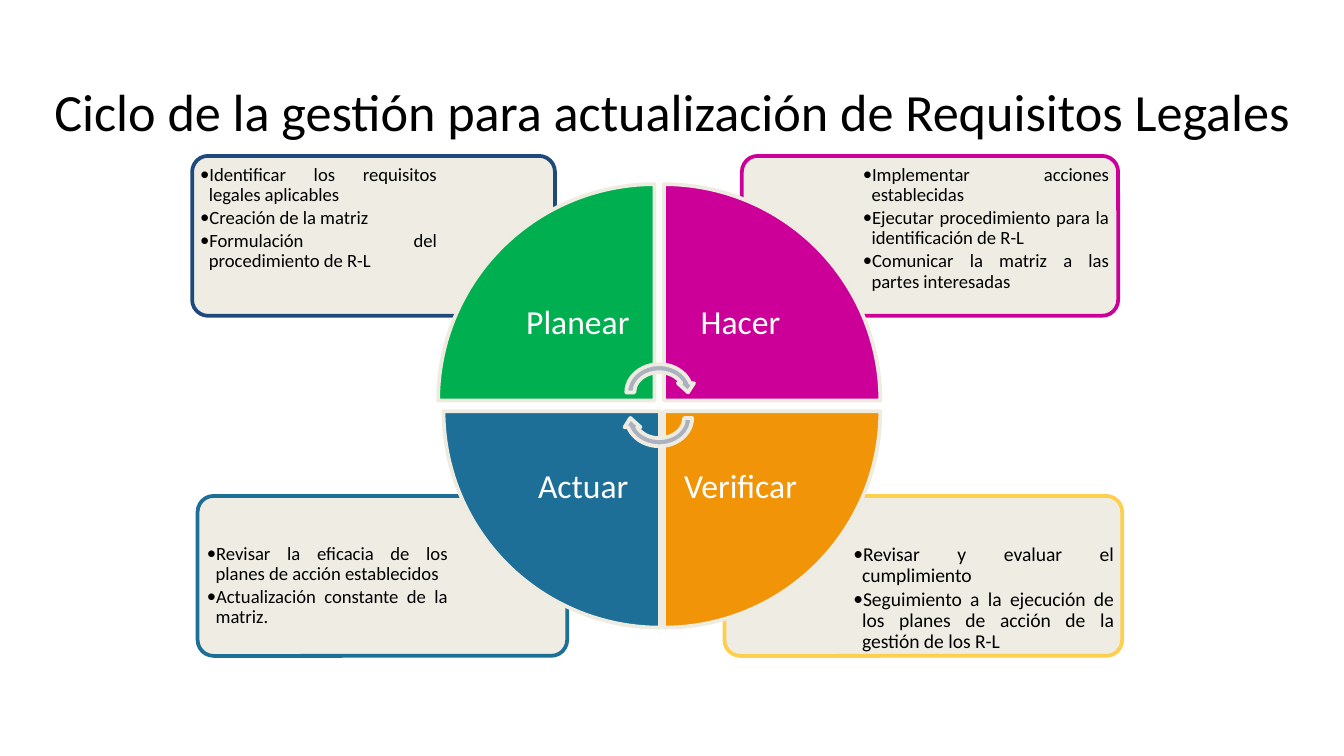
from dataclasses import dataclass

from lxml import etree
from pptx import Presentation
from pptx.dml.color import RGBColor
from pptx.enum.shapes import MSO_SHAPE
from pptx.enum.text import MSO_ANCHOR, PP_ALIGN
from pptx.oxml.ns import qn
from pptx.util import Emu, Pt

ROUNDED = MSO_SHAPE.ROUNDED_RECTANGLE
WEDGE = MSO_SHAPE.PIE_WEDGE
CIRCULAR_ARROW = MSO_SHAPE.CIRCULAR_ARROW
TOP, MIDDLE = MSO_ANCHOR.TOP, MSO_ANCHOR.MIDDLE
CENTER, JUSTIFY = PP_ALIGN.CENTER, PP_ALIGN.JUSTIFY
PX = 4572  # 200 px to the inch


@dataclass(frozen=True)
class Theme:
    font: str = "Calibri"
    ink: str = "000000"
    white: str = "FFFFFF"
    cream: str = "EEECE1"
    arrow: str = "ACB1BF"
    title_size: float = 28
    label_size: float = 18
    line_width: float = 2
    card_opacity: int = 90


THEME = Theme()
TITLE = "Ciclo de la gestión para actualización de Requisitos Legales"

# Card box, text box relative to the card, border, type size, bullets
CARDS = [
    ((1078, 738, 592, 238), (184, 64, 404, 168), "FECE4D", 10.5,
     ["Revisar y evaluar el cumplimiento",
      "Seguimiento a la ejecución de los planes de acción de la gestión de los R-L"]),
    ((294, 738, 550, 238), (6, 64, 374, 168), "1D6F98", 10,
     ["Revisar la eficacia de los planes de acción establecidos",
      "Actualización constante de la matriz."]),
    ((1104, 232, 560, 238), (172, 6, 382, 168), "CC0099", 10,
     ["Implementar acciones establecidas",
      "Ejecutar procedimiento para la identificación de R-L",
      "Comunicar la matriz a las partes interesadas"]),
    ((286, 232, 540, 238), (4, 6, 368, 168), "1F497D", 10,
     ["Identificar los requisitos legales aplicables",
      "Creación de la matriz",
      "Formulación del procedimiento de R-L"]),
]

# Label, left and top inside the wheel, rotation, colour
QUADRANTS = [
    ("Planear", 0, 0, 0, "00B050"),
    ("Hacer", 336, 0, 90, "CC0099"),
    ("Verificar", 336, 338, 180, "F19408"),
    ("Actuar", 8, 338, 270, "1D6F98"),
]


def scaled(box):
    return [Emu(length * PX) for length in box]


def apply(target, values):
    for name, value in values.items():
        setattr(target, name, value)


def add_filled_shape(slide, kind, box, fill, line, rotation=0):
    shape = slide.shapes.add_shape(kind, *scaled(box))
    shape.shadow.inherit = False
    shape.rotation = rotation
    shape.fill.solid()
    shape.fill.fore_color.rgb = RGBColor.from_string(fill)
    shape.line.color.rgb = RGBColor.from_string(line)
    shape.line.width = Pt(THEME.line_width)
    return shape


def add_text(slide, box, lines, size, color, alignment, anchor, inset,
             bullets=False, **paragraph_format):
    frame = slide.shapes.add_textbox(*scaled(box)).text_frame
    margins = ("margin_left", "margin_right", "margin_top", "margin_bottom")
    apply(frame, {"word_wrap": True, "vertical_anchor": anchor,
                  **dict.fromkeys(margins, Emu(inset * PX))})
    for index, line in enumerate(lines):
        paragraph = frame.add_paragraph() if index else frame.paragraphs[0]
        if bullets:
            add_bullet(paragraph)
        apply(paragraph, {"alignment": alignment, **paragraph_format})
        run = paragraph.add_run()
        run.text = line
        apply(run.font, {"name": THEME.font, "size": Pt(size)})
        run.font.color.rgb = RGBColor.from_string(color)


def add_bullet(paragraph, indent=13):
    properties = paragraph._p.get_or_add_pPr()
    properties.set("marL", str(indent * PX))
    properties.set("indent", str(-indent * PX))
    etree.SubElement(properties, qn("a:buFont")).set("typeface", THEME.font)
    etree.SubElement(properties, qn("a:buChar")).set("char", "•")


def set_opacity(shape, percent):
    color = shape.fill._xPr.find(qn("a:solidFill"))[0]
    etree.SubElement(color, qn("a:alpha")).set("val", str(percent * 1000))


def add_title(slide, box):
    add_text(slide, box, [TITLE], THEME.title_size, THEME.ink, CENTER, MIDDLE, 10)


def add_card(slide, box, text_box, border, size, lines):
    left, top, _, _ = box
    card = add_filled_shape(slide, ROUNDED, box, THEME.cream, border)
    card.adjustments[0] = 0.1
    set_opacity(card, THEME.card_opacity)
    x, y, width, height = text_box
    add_text(slide, (left + x, top + y, width, height), lines, size, THEME.ink,
             JUSTIFY, TOP, 8, bullets=True, level=1, line_spacing=0.9,
             space_after=Pt(size * 0.15))


def add_wheel(slide, box):
    """Place four wedges, labelled towards the centre, and the turning arrows."""
    left, top, _, _ = box
    wedge, label = 322, 228
    for name, x, y, rotation, color in QUADRANTS:
        add_filled_shape(slide, WEDGE, (left + x, top + y, wedge, wedge),
                         color, THEME.cream, rotation)
        label_x = left + x + (wedge - label if x < wedge else 0)
        label_y = top + y + (wedge - label if y < wedge else 0)
        add_text(slide, (label_x, label_y, label, label), [name],
                 THEME.label_size, THEME.white, CENTER, MIDDLE, 28,
                 line_spacing=0.9)
    for y, rotation in ((262, 0), (300, 180)):
        add_filled_shape(slide, CIRCULAR_ARROW, (left + 274, top + y, 110, 96),
                         THEME.arrow, THEME.cream, rotation)


def main():
    presentation = Presentation()
    presentation.slide_width, presentation.slide_height = scaled((2000, 1125))
    slide = presentation.slides.add_slide(presentation.slide_layouts[6])
    add_title(slide, (0, 96, 2000, 138))
    for card in CARDS:
        add_card(slide, *card)
    add_wheel(slide, (652, 274, 658, 660))
    presentation.save("out.pptx")


if __name__ == "__main__":
    main()
